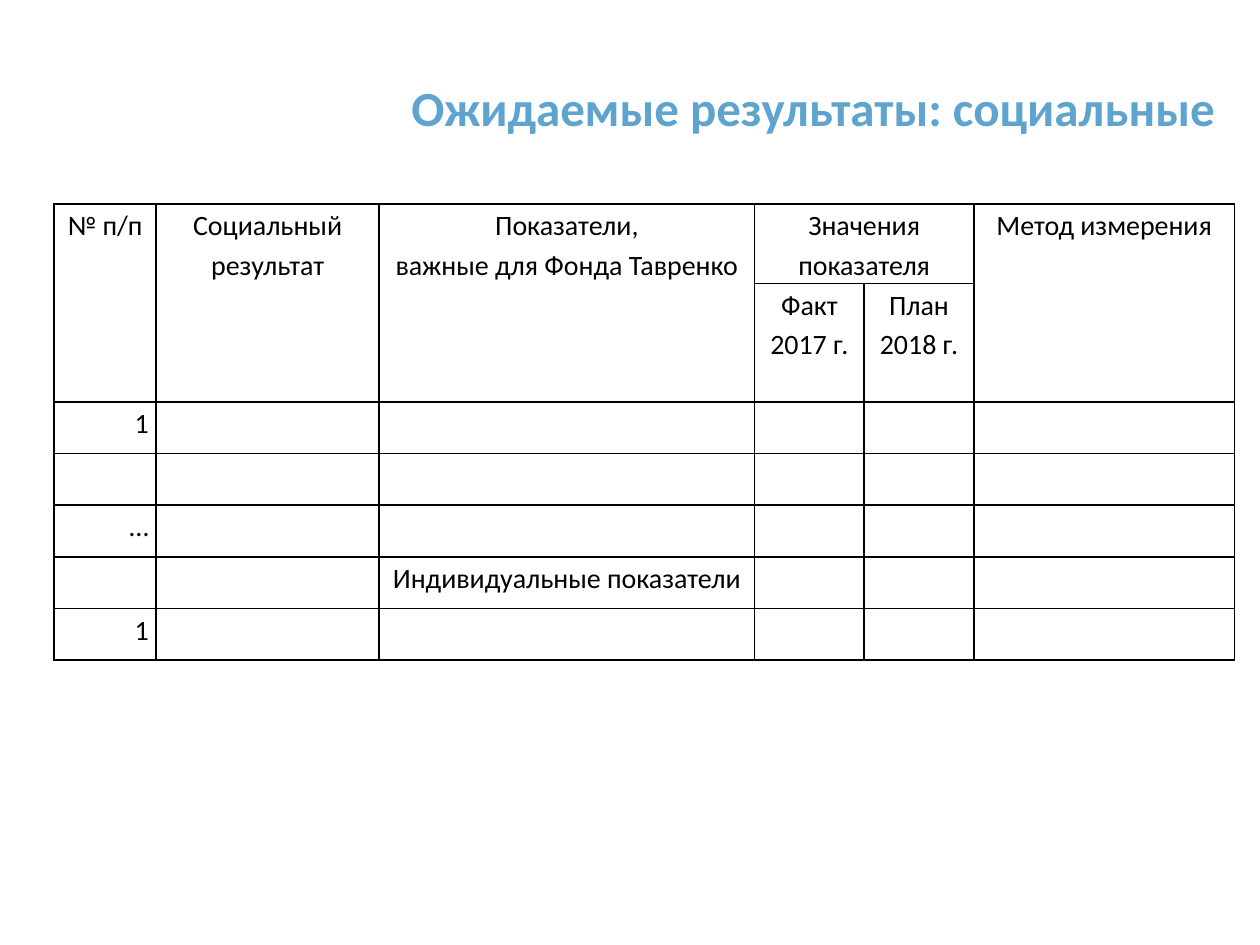
from lxml import etree
from pptx import Presentation
from pptx.dml.color import RGBColor as RGB
from pptx.enum.text import MSO_ANCHOR as Anchor, PP_ALIGN as Align
from pptx.oxml import parse_xml
from pptx.util import Inches, Pt

COLORS = {"title": "5EA4CF", "text": "000000", "border": "000000"}
DRAWING_NS = "http://schemas.openxmlformats.org/drawingml/2006/main"

COLUMN_WIDTHS = [0.81, 1.77, 2.98, 0.87, 0.87, 2.07]
ROW_HEIGHTS = [0.63, 0.94] + [0.41] * 5

# (row, column): (paragraphs, alignment)
CELL_TEXTS = {
    (0, 0): (["№ п/п"], Align.CENTER),
    (0, 1): (["Социальный результат"], Align.CENTER),
    (0, 2): (["Показатели,", "важные для Фонда Тавренко"], Align.CENTER),
    (0, 3): (["Значения показателя"], Align.CENTER),
    (0, 5): (["Метод измерения"], Align.CENTER),
    (1, 3): (["Факт 2017 г."], Align.CENTER),
    (1, 4): (["План 2018 г."], Align.CENTER),
    (2, 0): (["1"], Align.RIGHT),
    (4, 0): (["…"], Align.RIGHT),
    (5, 2): (["Индивидуальные показатели"], Align.CENTER),
    (6, 0): (["1"], Align.RIGHT),
}
# Merged header cells: first corner, last corner
HEADER_SPANS = [((0, col), (1, col)) for col in (0, 1, 2, 5)] + [((0, 3), (0, 4))]


class SlideBuilder:
    font_name = "Calibri"

    def __init__(self, slide):
        self.slide = slide

    def set_text(self, frame, lines, align, spacing, size, bold, color):
        font_format = {"name": self.font_name, "size": Pt(size), "bold": bold}
        for index, line in enumerate(lines):
            paragraph = frame.paragraphs[0] if index == 0 else frame.add_paragraph()
            paragraph.alignment = align
            paragraph.line_spacing = spacing
            paragraph.text = line
            for name, value in font_format.items():
                setattr(paragraph.font, name, value)
            paragraph.font.color.rgb = RGB.from_string(COLORS[color])

    def title(self, text, left, top, width, height):
        box = self.slide.shapes.add_textbox(
            Inches(left), Inches(top), Inches(width), Inches(height))
        frame = box.text_frame
        frame_format = {"word_wrap": True, "vertical_anchor": Anchor.MIDDLE}
        frame_format.update({f"margin_{side}": Inches(0.04)
                             for side in ("left", "top", "right", "bottom")})
        for name, value in frame_format.items():
            setattr(frame, name, value)
        self.set_text(frame, [text], Align.RIGHT, 0.9, 28, True, "title")

    def border(self, cell):
        properties = cell._tc.get_or_add_tcPr()
        for position, side in enumerate(("lnL", "lnR", "lnT", "lnB")):
            line = parse_xml(
                f'<a:{side} xmlns:a="{DRAWING_NS}" w="{Pt(1)}"><a:solidFill/></a:{side}>')
            etree.SubElement(line[0], f"{{{DRAWING_NS}}}srgbClr", val=COLORS["border"])
            properties.insert(position, line)

    def table(self, left, top):
        frame = self.slide.shapes.add_table(
            len(ROW_HEIGHTS), len(COLUMN_WIDTHS), Inches(left), Inches(top),
            Inches(sum(COLUMN_WIDTHS)), Inches(sum(ROW_HEIGHTS)))
        results = frame.table
        results.first_row = results.horz_banding = False
        for column, width in zip(results.columns, COLUMN_WIDTHS):
            column.width = Inches(width)
        for row, height in zip(results.rows, ROW_HEIGHTS):
            row.height = Inches(height)
        for first, last in HEADER_SPANS:
            results.cell(*first).merge(results.cell(*last))

        cell_format = {"margin_left": Inches(0.06), "margin_right": Inches(0.06),
                       "margin_top": 0, "margin_bottom": 0}
        for row in range(len(ROW_HEIGHTS)):
            for col in range(len(COLUMN_WIDTHS)):
                cell = results.cell(row, col)
                for name, value in cell_format.items():
                    setattr(cell, name, value)
                cell.fill.background()
                self.border(cell)
                lines, align = CELL_TEXTS.get((row, col), ([""], Align.CENTER))
                self.set_text(cell.text_frame, lines, align, 1.15, 16, False, "text")


def main():
    deck = Presentation()
    deck.slide_width, deck.slide_height = Inches(10), Inches(7.5)
    builder = SlideBuilder(deck.slides.add_slide(deck.slide_layouts[6]))

    # Heading
    builder.title("Ожидаемые результаты: социальные", 1.06, 0, 8.62, 1.75)
    # Social results table
    builder.table(0.43, 1.62)

    deck.save("out.pptx")


if __name__ == "__main__":
    main()
